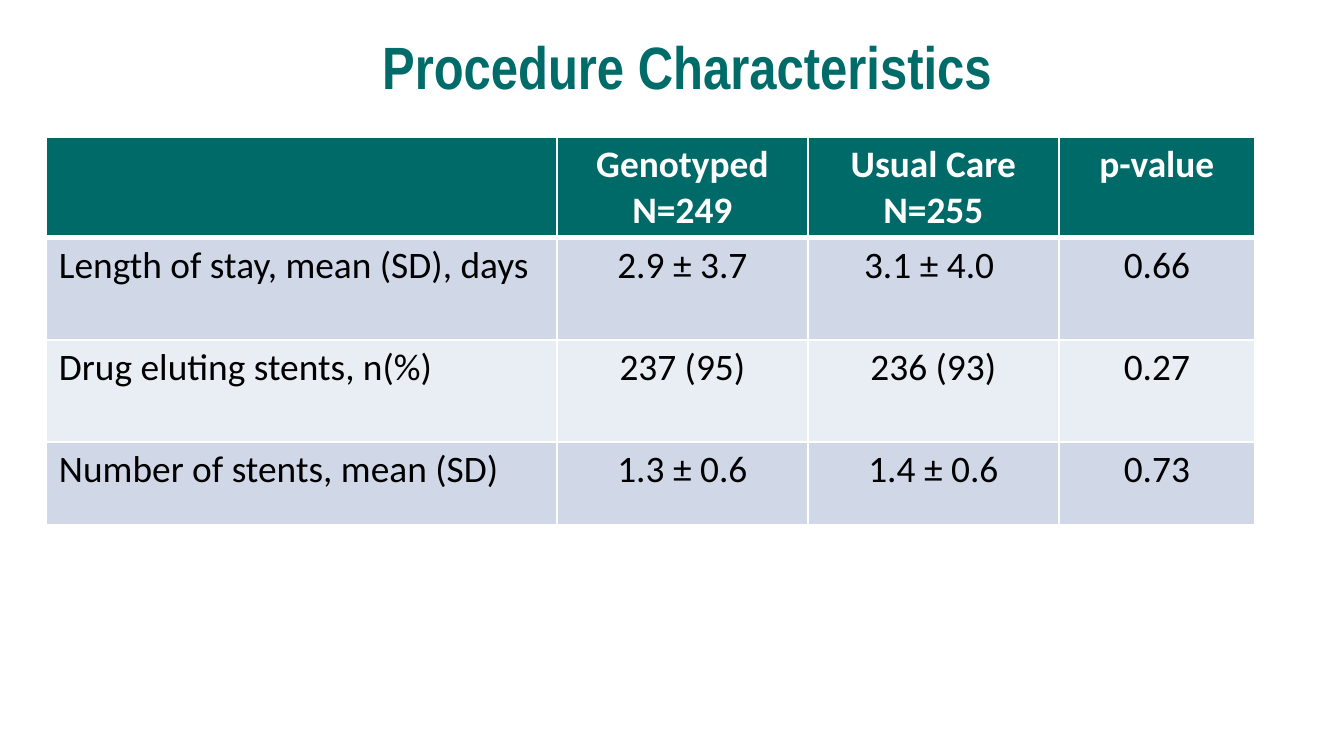
from lxml import etree
from pptx import Presentation
from pptx.dml.color import RGBColor
from pptx.enum import text
from pptx.oxml import ns
from pptx.util import Pt

PX = 914400 / 134.4  # EMU in one px

TITLE_GREEN = RGBColor(0x00, 0x6C, 0x69)
HEADER_GREEN = RGBColor(0x00, 0x6A, 0x68)
BAND_DARK = RGBColor(0xD0, 0xD8, 0xE8)
BAND_LIGHT = RGBColor(0xE9, 0xED, 0xF4)
WHITE = RGBColor(0xFF, 0xFF, 0xFF)
BLACK = RGBColor(0x00, 0x00, 0x00)

COLUMN_WIDTHS = [511, 251, 251, 196]
ROW_HEIGHTS = [101, 102, 102, 83]
ROWS = [
    ["", "Genotyped\nN=249", "Usual Care\nN=255", "p-value"],
    ["Length of stay, mean (SD), days", "2.9 ± 3.7", "3.1 ± 4.0 ", "0.66"],
    ["Drug eluting stents, n(%)", "237 (95)", "236 (93)", "0.27"],
    ["Number of stents, mean (SD)", "1.3 ± 0.6", "1.4 ± 0.6", "0.73"],
]


def px(length):
    return round(length * PX)


class SlideBuilder:
    def __init__(self, slide):
        self.slide = slide
        self.title_font = "Arial Narrow"
        self.body_font = "Calibri"

    def format_text(self, text_frame, font, size, color, bold, align):
        for paragraph in text_frame.paragraphs:
            paragraph.alignment = align
            for run in paragraph.runs:
                run.font.name = font
                run.font.size = Pt(size)
                run.font.bold = bold
                run.font.color.rgb = color

    def title(self, left, top, width, height, words):
        box = self.slide.shapes.add_textbox(px(left), px(top), px(width), px(height))
        text_frame = box.text_frame
        text_frame.word_wrap = True
        text_frame.vertical_anchor = text.MSO_ANCHOR.MIDDLE
        text_frame.text = words
        self.format_text(text_frame, self.title_font, 32, TITLE_GREEN, True,
                         text.PP_ALIGN.CENTER)

    def border(self, cell, side, points):
        properties = cell._tc.get_or_add_tcPr()
        line = etree.SubElement(properties, ns.qn(f"a:ln{side}"), w=str(Pt(points)))
        fill = etree.SubElement(line, ns.qn("a:solidFill"))
        etree.SubElement(fill, ns.qn("a:srgbClr"), val=str(WHITE))

    def cell(self, cell, words, row, column):
        header = row == 0
        cell.margin_left = cell.margin_right = px(13)
        cell.margin_top = cell.margin_bottom = px(5)
        # The rule under the header is thicker than the others
        for side in "LRTB":
            thick = (row, side) in [(0, "B"), (1, "T")]
            self.border(cell, side, 3 if thick else 1)
        cell.fill.solid()
        band = BAND_DARK if row % 2 else BAND_LIGHT
        cell.fill.fore_color.rgb = HEADER_GREEN if header else band
        cell.text_frame.text = words
        centered = header or column > 0
        self.format_text(cell.text_frame, self.body_font, 20,
                         WHITE if header else BLACK, header,
                         text.PP_ALIGN.CENTER if centered else text.PP_ALIGN.LEFT)

    def table(self, left, top, widths, heights, rows):
        frame = self.slide.shapes.add_table(
            len(rows), len(widths), px(left), px(top),
            px(sum(widths)), px(sum(heights)))
        table = frame.table
        table.horz_banding = False
        for column, width in zip(table.columns, widths):
            column.width = px(width)
        for row, height in zip(table.rows, heights):
            row.height = px(height)
        for row, values in enumerate(rows):
            for column, words in enumerate(values):
                self.cell(table.cell(row, column), words, row, column)


def main():
    presentation = Presentation()
    presentation.slide_width = px(1344)
    presentation.slide_height = px(756)
    builder = SlideBuilder(presentation.slides.add_slide(presentation.slide_layouts[6]))

    # Title
    builder.title(67, 20, 1241, 91, "Procedure Characteristics")

    # Comparison of the two groups
    builder.table(46, 137, COLUMN_WIDTHS, ROW_HEIGHTS, ROWS)

    presentation.save("out.pptx")


if __name__ == "__main__":
    main()
